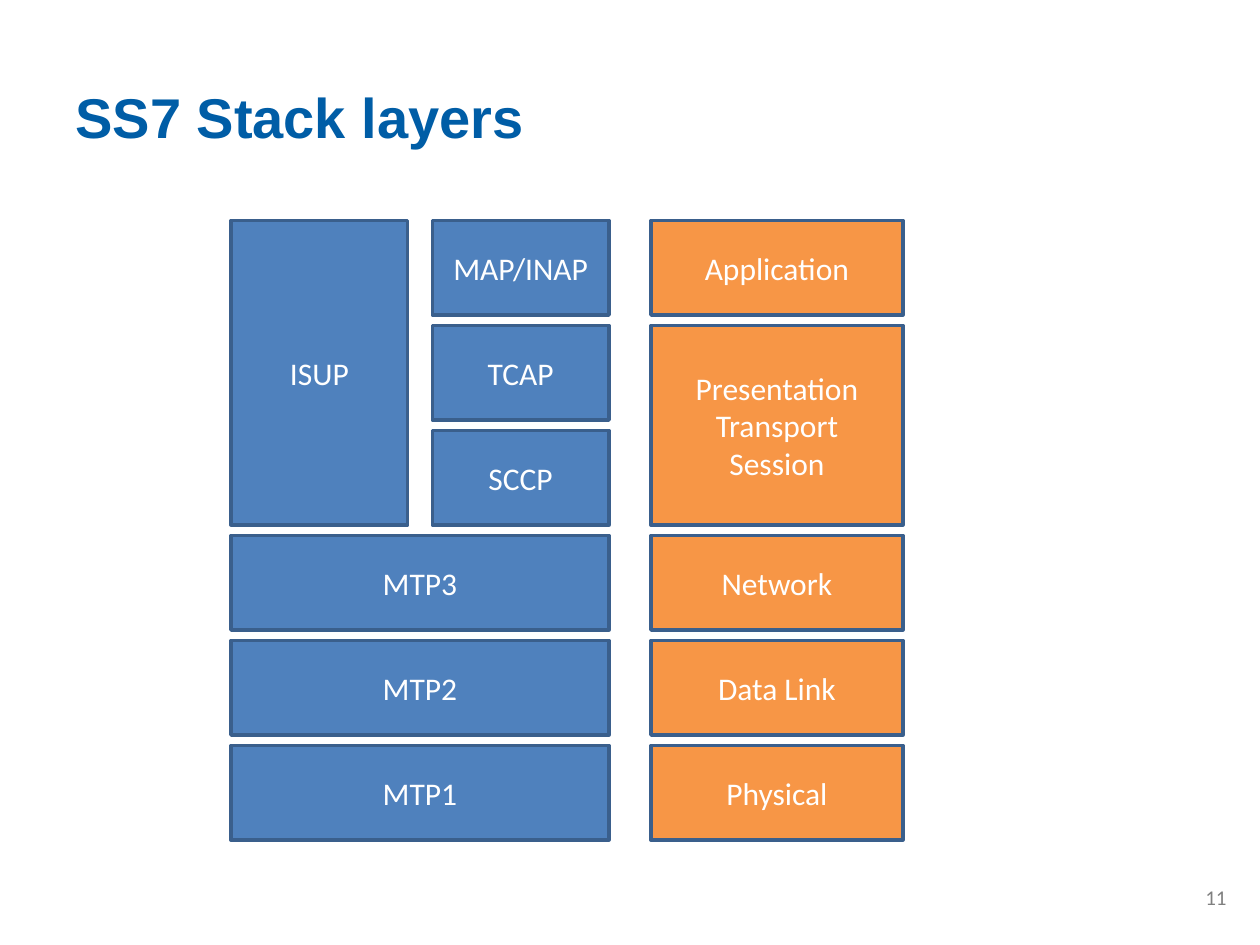
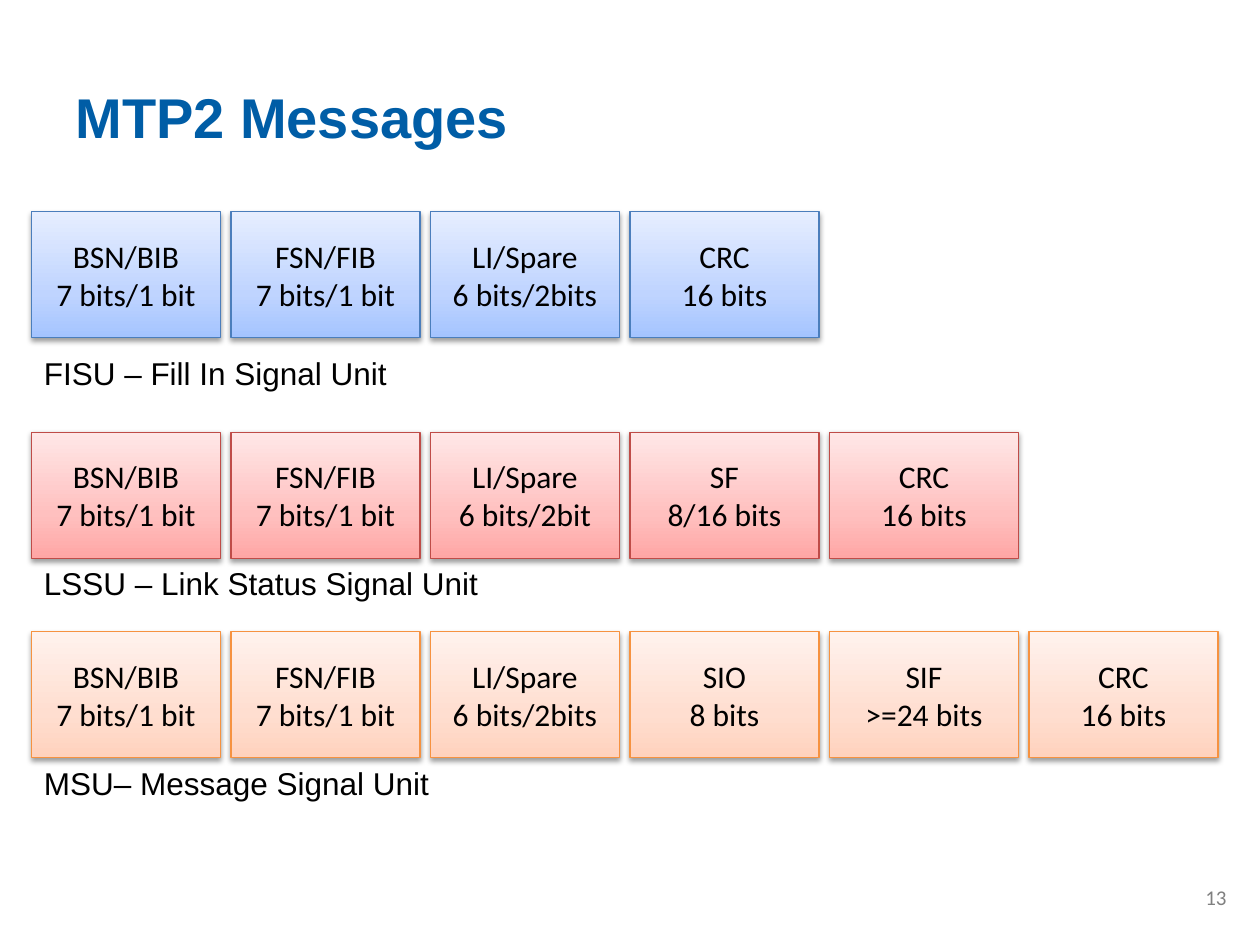
from dataclasses import dataclass

from lxml import etree
from pptx import Presentation
from pptx.dml.color import RGBColor
from pptx.enum.shapes import MSO_SHAPE
from pptx.enum.text import MSO_ANCHOR, PP_ALIGN
from pptx.oxml import parse_xml
from pptx.oxml.ns import qn
from pptx.util import Pt

RECTANGLE = MSO_SHAPE.RECTANGLE
TOP, MIDDLE = MSO_ANCHOR.TOP, MSO_ANCHOR.MIDDLE
LEFT, CENTER, RIGHT = PP_ALIGN.LEFT, PP_ALIGN.CENTER, PP_ALIGN.RIGHT


@dataclass(frozen=True)
class Theme:
    heading_font: str = "Arial"
    body_font: str = "Calibri"
    title_size: int = 32
    body_size: int = 18
    number_size: int = 12
    title: str = "005DA6"
    number: str = "808080"
    dark: str = "000000"
    light: str = "FFFFFF"
    protocol: str = "4F81BD"
    osi: str = "F79646"
    layer_line: str = "3A5F8C"
    # Line colour, then gradient colours from bottom to top
    fisu: tuple = ("4B7EBC", "A4C4FF", "BFD4FF", "E6EEFF")
    lssu: tuple = ("BF4C48", "FFA6A5", "FFC0BF", "FFE7E7")
    msu: tuple = ("F69240", "FFD2BD", "FFDED0", "FFF2ED")


THEME = Theme()
GRADIENT_POSITIONS = (0, 35000, 100000)
SHADOW_XML = (
    '<a:outerShdw xmlns:a="http://schemas.openxmlformats.org/drawingml/2006/main"'
    ' blurRad="40000" dist="20000" dir="5400000" rotWithShape="0">'
    '<a:srgbClr val="000000"><a:alpha val="38000"/></a:srgbClr></a:outerShdw>'
)


def write_text(shape, lines, font, size, color, align=LEFT, anchor=MIDDLE, bold=False):
    frame = shape.text_frame
    frame.word_wrap = True
    frame.vertical_anchor = anchor
    for index, line in enumerate(lines):
        paragraph = frame.add_paragraph() if index else frame.paragraphs[0]
        paragraph.alignment = align
        run = paragraph.add_run()
        run.text = line
        run.font.name = font
        run.font.size = Pt(size)
        run.font.bold = bold
        run.font.color.rgb = RGBColor.from_string(color)


def add_box(slide, bounds, lines, text_color, line_color, line_width):
    """Add an unfilled, shadowless rectangle with centred text."""
    shape = slide.shapes.add_shape(RECTANGLE, *map(Pt, bounds))
    shape.shadow.inherit = False
    shape.line.color.rgb = RGBColor.from_string(line_color)
    shape.line.width = Pt(line_width)
    write_text(shape, lines, THEME.body_font, THEME.body_size, text_color, CENTER)
    return shape


presentation = Presentation()
presentation.slide_width, presentation.slide_height = Pt(720), Pt(540)

# Title and slide number on both slides
slides = []
for title, number in (("SS7 Stack layers", "11"), ("MTP2 Messages", "13")):
    slide = presentation.slides.add_slide(presentation.slide_layouts[6])
    title_box = slide.shapes.add_textbox(Pt(36), Pt(21.6), Pt(648), Pt(90))
    write_text(title_box, [title], THEME.heading_font, THEME.title_size, THEME.title,
               bold=True)
    number_box = slide.shapes.add_textbox(Pt(666), Pt(498.5), Pt(42), Pt(28.8))
    write_text(number_box, [number], THEME.body_font, THEME.number_size, THEME.number,
               RIGHT)
    slides.append(slide)
stack_slide, message_slide = slides

# Protocol stack beside the OSI layers
STACK_TOP, ROW_PITCH, ROW_GAP = 126, 60, 6
STACK_LEFT, STACK_WIDTH, HALF_WIDTH = 132, 216, 101
TCAP_LEFT = STACK_LEFT + STACK_WIDTH - HALF_WIDTH
OSI_LEFT, OSI_WIDTH = 372, 144

# Left, width, fill, then (first row, rows spanned, lines)
columns = (
    (STACK_LEFT, STACK_WIDTH, THEME.protocol,
     ((3, 1, ["MTP3"]), (4, 1, ["MTP2"]), (5, 1, ["MTP1"]))),
    (STACK_LEFT, HALF_WIDTH, THEME.protocol, ((0, 3, ["ISUP"]),)),
    (TCAP_LEFT, HALF_WIDTH, THEME.protocol,
     ((0, 1, ["MAP/INAP"]), (1, 1, ["TCAP"]), (2, 1, ["SCCP"]))),
    (OSI_LEFT, OSI_WIDTH, THEME.osi,
     ((0, 1, ["Application"]), (1, 2, ["Presentation", "Transport", "Session"]),
      (3, 1, ["Network"]), (4, 1, ["Data Link"]), (5, 1, ["Physical"]))),
)
for left, width, fill, layers in columns:
    for row, span, lines in layers:
        bounds = (left, STACK_TOP + row * ROW_PITCH, width, span * ROW_PITCH - ROW_GAP)
        layer = add_box(stack_slide, bounds, lines, THEME.light, THEME.layer_line, 2)
        layer.fill.solid()
        layer.fill.fore_color.rgb = RGBColor.from_string(fill)

# Fields of the three signal units
FIELD_LEFT, FIELD_PITCH, FIELD_WIDTH, FIELD_HEIGHT = 18, 114, 108, 72
BSN, FSN = ("BSN/BIB", "7 bits/1 bit"), ("FSN/FIB", "7 bits/1 bit")
LI, CRC = ("LI/Spare", "6 bits/2bits"), ("CRC", "16 bits")

# Top, label top, label, colours, fields
signal_units = (
    (121, 199, "FISU – Fill In Signal Unit", THEME.fisu, (BSN, FSN, LI, CRC)),
    (247, 319, "LSSU – Link Status Signal Unit", THEME.lssu,
     (BSN, FSN, ("LI/Spare", "6 bits/2bit"), ("SF", "8/16 bits"), CRC)),
    (361, 433, "MSU– Message Signal Unit", THEME.msu,
     (BSN, FSN, LI, ("SIO", "8 bits"), ("SIF", ">=24 bits"), CRC)),
)
for top, label_top, label, (line_color, *gradient), fields in signal_units:
    for column, lines in enumerate(fields):
        bounds = (FIELD_LEFT + column * FIELD_PITCH, top, FIELD_WIDTH, FIELD_HEIGHT)
        field = add_box(message_slide, bounds, lines, THEME.dark, line_color, 0.75)
        field.fill.gradient()
        field.fill.gradient_angle = 90
        properties = field._element.spPr
        stops = properties.find(f".//{qn('a:gsLst')}")
        for stop in list(stops):
            stops.remove(stop)
        for position, color in zip(GRADIENT_POSITIONS, gradient):
            stop = etree.SubElement(stops, qn("a:gs"), pos=str(position))
            etree.SubElement(stop, qn("a:srgbClr"), val=color)
        properties.find(qn("a:effectLst")).append(parse_xml(SHADOW_XML))
    label_box = message_slide.shapes.add_textbox(
        Pt(FIELD_LEFT), Pt(label_top), Pt(336), Pt(29))
    write_text(label_box, [label], THEME.heading_font, THEME.body_size, THEME.dark,
               anchor=TOP)

presentation.save("out.pptx")
